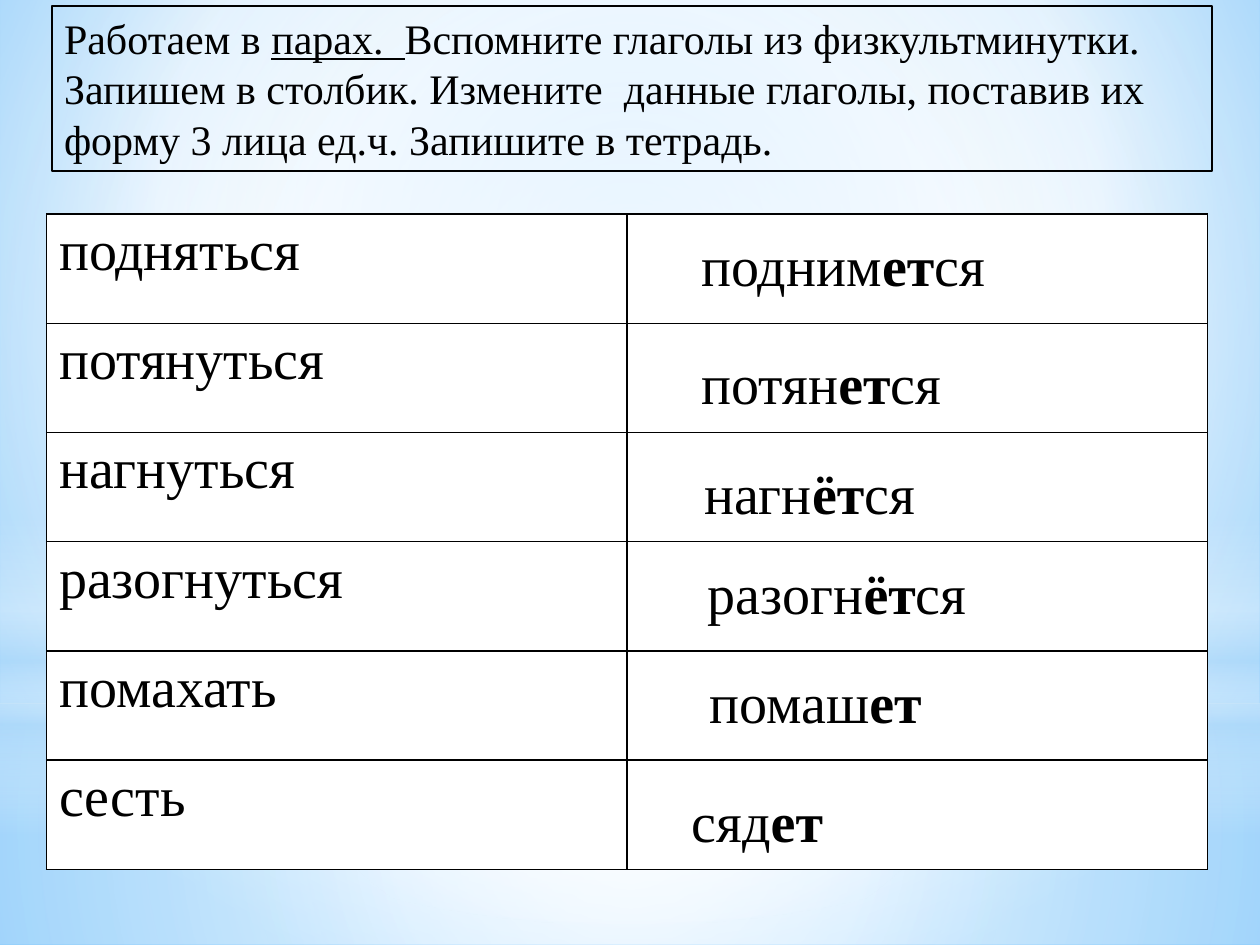
"""Build a Russian grammar slide: infinitives beside their third-person forms."""
from lxml import etree
from pptx import Presentation
from pptx.dml.color import RGBColor
from pptx.enum import shapes, text
from pptx.oxml import ns
from pptx.util import Pt

BLACK = RGBColor(0x00, 0x00, 0x00)
WHITE = RGBColor(0xFF, 0xFF, 0xFF)
PALE_BLUE = RGBColor(0xB4, 0xDC, 0xFA)
SKY = RGBColor(0x9E, 0xD5, 0xFF)
DEEP_SKY = RGBColor(0x5B, 0xB9, 0xFF)
FONT = "Times New Roman"
CENTRE = (50, 50, 50, 50)
RECT, OVAL = shapes.MSO_SHAPE.RECTANGLE, shapes.MSO_SHAPE.OVAL

SKY_STOPS = [(0, SKY, 100), (60, WHITE, 100), (100, DEEP_SKY, 100)]
GLOWS = [
    (RECT, (0, 401.8, 720, 138.2), CENTRE,
     [(0, WHITE, 91), (37, WHITE, 76), (100, PALE_BLUE, 79)]),
    (RECT, (0, 0, 720, 401.8), CENTRE,
     [(0, WHITE, 89), (48, WHITE, 62), (100, PALE_BLUE, 79)]),
    (RECT, (0, 296.6, 720, 180), None,
     [(0, WHITE, 0), (29, WHITE, 30), (45, PALE_BLUE, 40),
      (55, WHITE, 26), (65, PALE_BLUE, 60), (100, WHITE, 0)]),
    (OVAL, (0, 126, 720, 401.8), CENTRE, [(0, WHITE, 100), (56, WHITE, 0)]),
]
TASK = [
    ("Работаем в ", {}),
    ("парах.  ", {"underline": True}),
    ("Вспомните глаголы из физкультминутки. Запишем в столбик. "
     "Измените  данные глаголы, поставив их  форму 3 лица ед.ч. "
     "Запишите в тетрадь.", {}),
]
INFINITIVES = ["подняться", "потянуться", "нагнуться",
               "разогнуться", "помахать", "сесть"]
ANSWERS = [
    (("подним", "ет", "ся"), (393.8, 128.2, 181.4), True),
    (("потян", "ет", "ся"), (393.8, 195.8, 169.9), True),
    (("нагн", "ёт", "ся"), (395.3, 258.5, 143.3), True),
    (("разогн", "ёт", "ся"), (397.4, 315.4, 162.7), False),
    (("помаш", "ет"), (398.2, 378, 136.8), False),
    (("сяд", "ет"), (388.1, 445.7, 90.7), True),
]


def points(*lengths):
    return [Pt(length) for length in lengths]


def add_tag(parent, tag, **attributes):
    return etree.SubElement(parent, ns.qn(tag), attributes)


def set_gradient(element, stops, focus):
    """Swap the first solid fill for a gradient, round when it has a focus."""
    solid = element.find(".//" + ns.qn("a:solidFill"))
    gradient = etree.Element(ns.qn("a:gradFill"), rotWithShape="1")
    stop_list = add_tag(gradient, "a:gsLst")
    for position, colour, opacity in stops:
        stop = add_tag(stop_list, "a:gs", pos=str(position * 1000))
        tint = add_tag(stop, "a:srgbClr", val=str(colour))
        if opacity < 100:
            add_tag(tint, "a:alpha", val=str(opacity * 1000))
    if focus:
        sides = {side: str(share * 1000) for side, share in zip("ltrb", focus)}
        add_tag(add_tag(gradient, "a:path", path="circle"), "a:fillToRect", **sides)
    else:
        add_tag(gradient, "a:lin", ang="5400000", scaled="0")
    solid.getparent().replace(solid, gradient)


def add_glow(slide, outline, box, focus, stops):
    glow = slide.shapes.add_shape(outline, *points(*box))
    glow.shadow.inherit = False
    glow.fill.solid()
    set_gradient(glow.element, stops, focus)
    glow.line.fill.background()


def set_font(paragraph, size):
    paragraph.font.name = FONT
    paragraph.font.size = Pt(size)
    paragraph.font.color.rgb = BLACK


def write_runs(paragraph, pieces, size):
    set_font(paragraph, size)
    for wording, emphasis in pieces:
        run = paragraph.add_run()
        run.text = wording
        for feature, value in emphasis.items():
            setattr(run.font, feature, value)


def add_task(slide):
    task = slide.shapes.add_shape(RECT, *points(29.5, 3.6, 663.1, 94.3))
    task.shadow.inherit = False
    task.fill.background()
    task.line.color.rgb = BLACK
    task.line.width = Pt(1)
    frame = task.text_frame
    frame.word_wrap = True
    frame.auto_size = text.MSO_AUTO_SIZE.SHAPE_TO_FIT_TEXT
    frame.vertical_anchor = text.MSO_ANCHOR.TOP
    frame.paragraphs[0].alignment = text.PP_ALIGN.LEFT
    write_runs(frame.paragraphs[0], TASK, 24)


def style_cell(cell):
    """Give a cell a white fill and thin black borders."""
    cell.fill.solid()
    cell.fill.fore_color.rgb = WHITE
    properties = cell._tc.get_or_add_tcPr()
    for index, side in enumerate("LRTB"):
        border = etree.Element(ns.qn("a:ln" + side), w=str(Pt(1)))
        add_tag(add_tag(border, "a:solidFill"), "a:srgbClr", val=str(BLACK))
        properties.insert(index, border)


def add_verb_table(slide):
    verbs = slide.shapes.add_table(
        len(INFINITIVES), 2, *points(26.6, 122.4, 663.4, 374.4)).table
    verbs.first_row = verbs.horz_banding = False
    for row, infinitive in enumerate(INFINITIVES):
        verbs.cell(row, 0).text = infinitive
        set_font(verbs.cell(row, 0).text_frame.paragraphs[0], 32)
    for cell in verbs.iter_cells():
        style_cell(cell)


def add_answer(slide, parts, place, wraps):
    """Write a verb form with its ending, the second part, in bold."""
    left, top, width = place
    answer = slide.shapes.add_textbox(*points(left, top, width, 46))
    frame = answer.text_frame
    frame.word_wrap = wraps
    frame.auto_size = text.MSO_AUTO_SIZE.SHAPE_TO_FIT_TEXT
    pieces = [(part, {"bold": True} if index == 1 else {})
              for index, part in enumerate(parts)]
    write_runs(frame.paragraphs[0], pieces, 32)


def main():
    deck = Presentation()
    deck.slide_width, deck.slide_height = points(720, 540)
    slide = deck.slides.add_slide(deck.slide_layouts[6])
    slide.background.fill.solid()
    set_gradient(slide.element, SKY_STOPS, (20, 10, 20, 60))
    for glow in GLOWS:
        add_glow(slide, *glow)
    add_task(slide)
    add_verb_table(slide)
    for answer in ANSWERS:
        add_answer(slide, *answer)
    deck.save("out.pptx")


if __name__ == "__main__":
    main()
